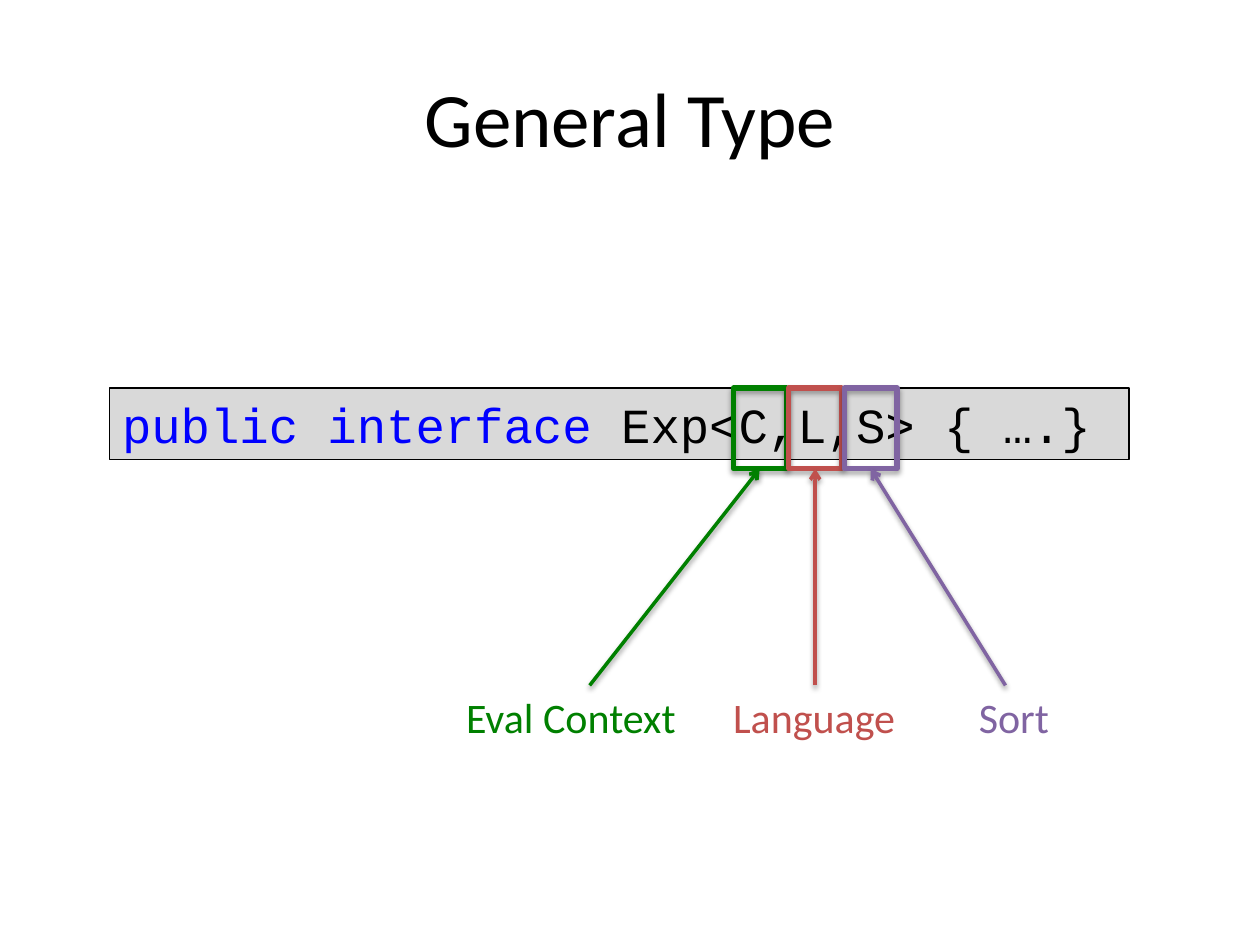
import pptx
import pptx.util
import pptx.dml.color
import pptx.enum.shapes
import pptx.enum.text
import pptx.oxml
import pptx.oxml.ns

Inches = pptx.util.Inches
Pt = pptx.util.Pt
RGB = pptx.dml.color.RGBColor.from_string

THEME = {
    "black": "000000", "keyword": "0000FF", "bar": "D9D9D9",
    "green": "008000", "red": "C0504D", "purple": "8064A2",
    "body": "Calibri", "code": "Courier New",
    "title_size": 44, "code_size": 28, "label_size": 24,
}
TITLE = "General Type"
CODE = [("public interface ", "keyword"), ("Exp<C,L,S> { ….}", "black")]
PARAMETERS = [
    ("Eval Context", "green", 3.6, 1.91, 4.68),
    ("Language", "red", 5.72, 1.5, None),
    ("Sort", "purple", 7.67, 0.76, 7.98),
]
BOX_LEFT, BOX_STEP, BOX_TOP, BOX_W, BOX_H = 5.82, 0.44, 3.08, 0.42, 0.64
LABEL_TOP, LABEL_H = 5.44, 0.5


def add_text(tf, text, color="black", size="label_size", font="body"):
    r = tf.paragraphs[0].add_run()
    r.text = text
    r.font.name = THEME[font]
    r.font.size = Pt(THEME[size])
    r.font.color.rgb = RGB(THEME[color])


def add_frame(left, top, width, height, wrap=True):
    s = slide.shapes.add_textbox(*map(Inches, (left, top, width, height)))
    s.text_frame.word_wrap = wrap
    return s


def set_line(s, color, width):
    s.line.color.rgb = RGB(THEME[color])
    s.line.width = Pt(width)


def add_shadow(s, opacity, distance):
    s._element.spPr.append(pptx.oxml.parse_xml(
        f'<a:effectLst {pptx.oxml.ns.nsdecls("a")}>'
        f'<a:outerShdw blurRad="{Pt(3.1)}" dist="{Pt(distance)}" dir="5400000" rotWithShape="0">'
        f'<a:srgbClr val="{THEME["black"]}"><a:alpha val="{opacity * 1000}"/></a:srgbClr>'
        '</a:outerShdw></a:effectLst>'))


def add_box(left, color):
    s = slide.shapes.add_shape(
        pptx.enum.shapes.MSO_SHAPE.RECTANGLE,
        *map(Inches, (left, BOX_TOP, BOX_W, BOX_H)))
    s.fill.background()
    set_line(s, color, 3)
    add_shadow(s, 35, 1.8)
    return s


def add_arrow(label, box, start, color):
    s = slide.shapes.add_connector(
        pptx.enum.shapes.MSO_CONNECTOR.STRAIGHT,
        Inches(start or 0), Inches(LABEL_TOP), 0, 0)
    if start is None:
        s.begin_connect(label, 0)
    s.end_connect(box, 2)
    set_line(s, color, 2)
    s.line._get_or_add_ln().append(pptx.oxml.parse_xml(
        f'<a:tailEnd {pptx.oxml.ns.nsdecls("a")} type="arrow"/>'))
    add_shadow(s, 38, 1.6)


prs = pptx.Presentation()
prs.slide_width, prs.slide_height = Inches(10), Inches(7.5)
slide = prs.slides.add_slide(prs.slide_layouts[6])

tf = add_frame(0.5, 0.3, 9, 1.25).text_frame
tf.vertical_anchor = pptx.enum.text.MSO_ANCHOR.MIDDLE
tf.paragraphs[0].alignment = pptx.enum.text.PP_ALIGN.CENTER
add_text(tf, TITLE, size="title_size")

bar = add_frame(0.87, BOX_TOP, 8.09, 0.57)
bar.fill.solid()
bar.fill.fore_color.rgb = RGB(THEME["bar"])
set_line(bar, "black", 0.75)
for text, color in CODE:
    add_text(bar.text_frame, text, color=color, size="code_size", font="code")

boxes = [add_box(BOX_LEFT + i * BOX_STEP, p[1]) for i, p in enumerate(PARAMETERS)]
for box, (name, color, left, width, start) in zip(boxes, PARAMETERS):
    label = add_frame(left, LABEL_TOP, width, LABEL_H, wrap=False)
    add_text(label.text_frame, name, color=color)
    add_arrow(label, box, start, color)

prs.save("out.pptx")
